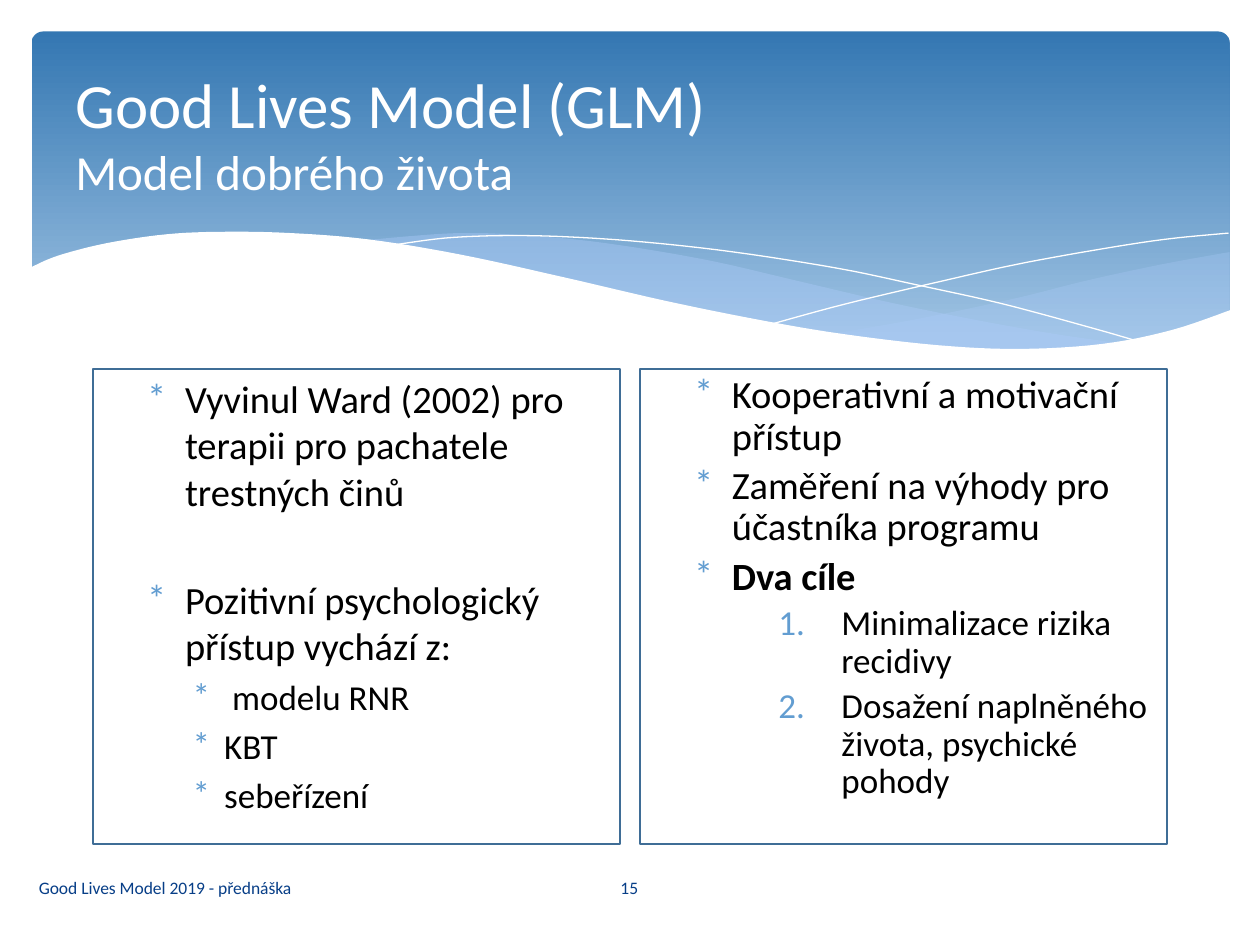
from dataclasses import dataclass
from typing import Optional

import lxml.etree
import pptx
import pptx.dml.color
import pptx.enum.shapes
import pptx.enum.text
import pptx.oxml
import pptx.oxml.ns
import pptx.util

Inches = pptx.util.Inches
Pt = pptx.util.Pt
RGBColor = pptx.dml.color.RGBColor
qn = pptx.oxml.ns.qn
PP_ALIGN = pptx.enum.text.PP_ALIGN
MSO_ANCHOR = pptx.enum.text.MSO_ANCHOR
MSO_SHAPE = pptx.enum.shapes.MSO_SHAPE

WHITE = RGBColor(0xFF, 0xFF, 0xFF)
BLACK = RGBColor(0, 0, 0)
BANNER_TOP = RGBColor(0x34, 0x77, 0xB2)
BANNER_BOTTOM = RGBColor(0x9F, 0xC3, 0xE3)
WAVE_BLUE = RGBColor(0xAC, 0xCB, 0xF9)
PANEL_LINE = RGBColor(0x3F, 0x6D, 0x96)
BULLET_BLUE = RGBColor(0x62, 0x9D, 0xD1)
FOOTER_BLUE = RGBColor(0x07, 0x3E, 0x87)
FONT = "Calibri"
CURVE_STEPS = 6

Point = tuple[float, float]


@dataclass(frozen=True)
class Wave:
    curves: list[list[Point]]
    fill: Optional[RGBColor] = None
    opacity: int = 100


@dataclass(frozen=True)
class Label:
    text: str
    left: float
    top: float
    width: float
    height: float
    sizes: tuple[int, ...]
    color: RGBColor
    alignment: PP_ALIGN = PP_ALIGN.LEFT


@dataclass(frozen=True)
class Item:
    text: str
    size: int = 22
    margin: float = 0.63
    hanging: float = 0.3
    space_before: float = 4.4
    bold: bool = False
    numbered: bool = False


@dataclass(frozen=True)
class Panel:
    left: float
    items: list[Item]
    line_spacing: float


def sub_item(text: str) -> Item:
    return Item(text, size=20, margin=0.94, hanging=0.25, space_before=4)


def goal(text: str) -> Item:
    return Item(text, size=20, margin=1.5, hanging=0.5, space_before=4, numbered=True)


WAVES = [
    Wave([[(9.76, 2), (9.21, 2.1), (8.61, 2.23), (8.05, 2.37), (7.29, 2.53), (6.61, 2.65)],
          [(6.61, 2.65), (7.05, 2.71), (7.57, 2.76), (8.03, 2.78), (8.54, 2.76), (8.97, 2.7),
           (9.35, 2.62), (9.76, 2.47)]], WAVE_BLUE, 29),
    Wave([[(8.93, 2.73), (8.37, 2.65), (7.75, 2.54), (7.06, 2.4), (6.29, 2.22), (5.69, 2.08),
           (5.14, 1.98), (4.65, 1.91), (4.2, 1.87), (3.8, 1.85), (3.44, 1.86), (2.86, 1.91)],
          [(2.86, 1.91), (3.42, 1.99), (4.04, 2.11), (4.49, 2.22), (5.3, 2.4), (6.01, 2.55),
           (6.65, 2.66), (7.22, 2.74), (7.73, 2.77), (8.18, 2.78), (8.57, 2.77), (8.93, 2.73)]],
         WAVE_BLUE, 40),
    Wave([[(3.09, 1.95), (3.53, 1.89), (4.01, 1.87), (4.5, 1.88), (5.1, 1.92), (5.82, 2),
           (6.65, 2.13), (7.27, 2.26), (7.95, 2.41), (8.69, 2.61), (9.07, 2.72)]]),
    Wave([[(6.13, 2.57), (6.72, 2.41), (7.48, 2.23), (8.06, 2.1), (8.66, 1.99), (9.24, 1.9),
           (9.75, 1.85)]]),
    Wave([[(9.77, 2.46), (9.3, 2.62), (8.75, 2.73), (8.09, 2.77), (7.44, 2.74), (6.68, 2.65),
           (6.03, 2.54), (5.29, 2.39), (4.47, 2.2), (3.65, 2.02), (2.92, 1.9), (2.3, 1.85),
           (1.77, 1.84), (1.32, 1.86), (0.85, 1.93), (0.46, 2.03), (0.23, 2.13)],
          [(0.23, 2.13), (0.23, 3.29)], [(0.23, 3.29), (9.77, 3.29)]], WHITE),
]

LABELS = [
    Label("Good Lives Model (GLM)\vModel dobrého života", 0.5, 0.37, 9, 1.37, (36, 28), WHITE),
    Label("Good Lives Model 2019 - přednáška", 0.21, 6.84, 4.14, 0.4, (10,), FOOTER_BLUE),
    Label("15", 4.36, 6.84, 1.27, 0.4, (10,), FOOTER_BLUE, PP_ALIGN.CENTER),
]

PANELS = [
    Panel(0.74, [
        Item("Vyvinul Ward (2002) pro terapii pro pachatele trestných činů"),
        Item("Pozitivní psychologický přístup vychází z:", space_before=35.6),
        sub_item(" modelu RNR"),
        sub_item("KBT"),
        sub_item("sebeřízení"),
    ], 1.0),
    Panel(5.08, [
        Item("Kooperativní a motivační přístup"),
        Item("Zaměření na výhody pro účastníka programu"),
        Item("Dva cíle", bold=True),
        goal("Minimalizace rizika recidivy"),
        goal("Dosažení naplněného života, psychické pohody"),
    ], 0.9),
]


def smooth_curve(knots: list[Point]) -> list[Point]:
    padded = [knots[0], *knots, knots[-1]]
    points = [knots[0]]
    for before, start, end, after in zip(padded, padded[1:], padded[2:], padded[3:]):
        for step in range(1, CURVE_STEPS + 1):
            t = step / CURVE_STEPS
            x, y = (
                0.5 * (2 * b + (c - a) * t + (2 * a - 5 * b + 4 * c - d) * t**2
                       + (3 * b - a - 3 * c + d) * t**3)
                for a, b, c, d in zip(before, start, end, after)
            )
            points.append((x, y))
    return points


def draw_banner(shapes) -> None:
    banner = shapes.add_shape(
        MSO_SHAPE.ROUNDED_RECTANGLE, Inches(0.25), Inches(0.25), Inches(9.51), Inches(2.7))
    banner.adjustments[0] = 0.034
    banner.shadow.inherit = False
    banner.line.fill.background()
    banner.fill.gradient()
    banner.fill.gradient_angle = 270
    stops = banner.fill.gradient_stops
    for stop, position, color in zip(stops, (0, 0.9), (BANNER_TOP, BANNER_BOTTOM)):
        stop.position = position
        stop.color.rgb = color


def draw_wave(shapes, wave: Wave) -> None:
    points = [(Inches(x), Inches(y)) for curve in wave.curves for x, y in smooth_curve(curve)]
    builder = shapes.build_freeform(*points[0])
    builder.add_line_segments(points[1:], close=wave.fill is not None)
    shape = builder.convert_to_shape()
    shape.shadow.inherit = False
    if wave.fill is None:
        shape.fill.background()
        shape.line.color.rgb = WHITE
        shape.line.width = Pt(0.75)
        return
    shape.line.fill.background()
    shape.fill.solid()
    shape.fill.fore_color.rgb = wave.fill
    if wave.opacity < 100:
        color = shape.fill._xPr.find(qn("a:solidFill"))[0]
        lxml.etree.SubElement(color, qn("a:alpha")).set("val", str(wave.opacity * 1000))


def format_run(run, size: int, color: RGBColor, bold: bool = False) -> None:
    run.font.name = FONT
    run.font.size = Pt(size)
    run.font.color.rgb = color
    run.font.bold = bold


def draw_label(shapes, label: Label) -> None:
    box = shapes.add_textbox(
        Inches(label.left), Inches(label.top), Inches(label.width), Inches(label.height))
    text_frame = box.text_frame
    text_frame.word_wrap = True
    text_frame.vertical_anchor = MSO_ANCHOR.MIDDLE
    text_frame.text = label.text
    paragraph = text_frame.paragraphs[0]
    paragraph.alignment = label.alignment
    for run, size in zip(paragraph.runs, label.sizes):
        format_run(run, size, label.color)


def add_bullet(paragraph, item: Item) -> None:
    properties = paragraph._p.get_or_add_pPr()
    properties.set("marL", str(Inches(item.margin)))
    properties.set("indent", str(-Inches(item.hanging)))
    color = lxml.etree.SubElement(properties, qn("a:buClr"))
    lxml.etree.SubElement(color, qn("a:srgbClr")).set("val", str(BULLET_BLUE))
    lxml.etree.SubElement(properties, qn("a:buFont")).set("typeface", FONT)
    if item.numbered:
        lxml.etree.SubElement(properties, qn("a:buAutoNum")).set("type", "arabicPeriod")
    else:
        lxml.etree.SubElement(properties, qn("a:buChar")).set("char", "*")


def draw_panel(shapes, panel: Panel) -> None:
    shape = shapes.add_shape(
        MSO_SHAPE.RECTANGLE, Inches(panel.left), Inches(2.93), Inches(4.18), Inches(3.77))
    shape.shadow.inherit = False
    shape.fill.solid()
    shape.fill.fore_color.rgb = WHITE
    shape.line.color.rgb = PANEL_LINE
    shape.line.width = Pt(1.25)
    text_frame = shape.text_frame
    text_frame.word_wrap = True
    text_frame.vertical_anchor = MSO_ANCHOR.TOP
    text_frame.text = "\n".join(item.text for item in panel.items)
    for index, (paragraph, item) in enumerate(zip(text_frame.paragraphs, panel.items)):
        add_bullet(paragraph, item)
        paragraph.alignment = PP_ALIGN.LEFT
        paragraph.line_spacing = panel.line_spacing
        paragraph.space_before = Pt(item.space_before if index else 0)
        format_run(paragraph.runs[0], item.size, BLACK, item.bold)


def main() -> None:
    """Build the Good Lives Model slide."""
    presentation = pptx.Presentation()
    presentation.slide_width, presentation.slide_height = Inches(10), Inches(7.5)
    shapes = presentation.slides.add_slide(presentation.slide_layouts[6]).shapes
    draw_banner(shapes)
    for wave in WAVES:
        draw_wave(shapes, wave)
    for label in LABELS:
        draw_label(shapes, label)
    for panel in PANELS:
        draw_panel(shapes, panel)
    presentation.save("out.pptx")


if __name__ == "__main__":
    main()
